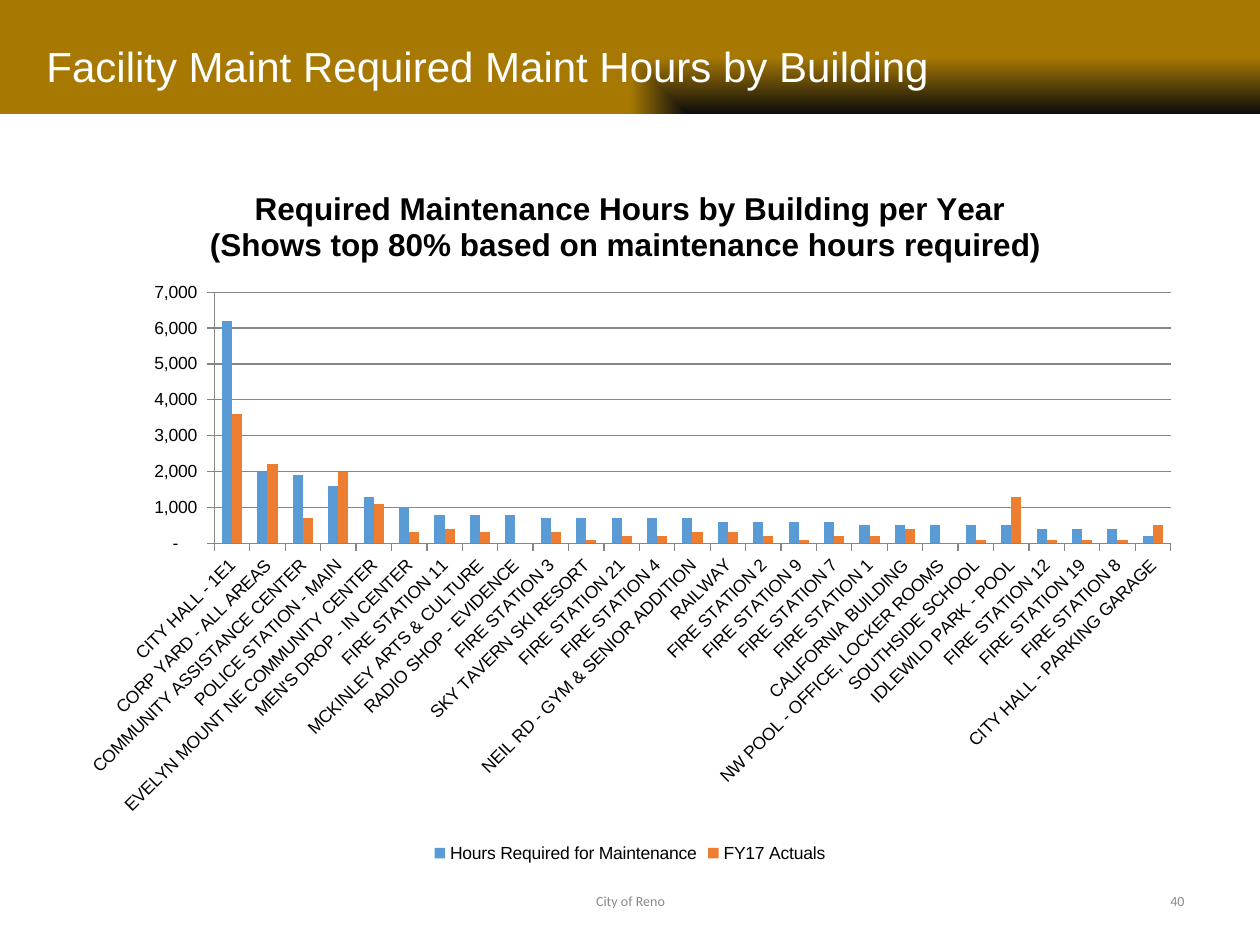
from dataclasses import dataclass
from typing import NamedTuple

from lxml import etree
from pptx import Presentation, util as u
from pptx.chart.data import CategoryChartData
from pptx.dml.color import RGBColor
from pptx.enum import chart as ch, shapes, text
from pptx.oxml import parse_xml
from pptx.oxml.ns import nsdecls, qn

WIDE, HIGH = u.Inches(10), u.Inches(7.5)


@dataclass(frozen=True)
class Theme:
    gold: str = "A77903"
    dark: str = "0C0C0C"
    white: str = "FFFFFF"
    black: str = "000000"
    gray: str = "898989"
    rule: str = "868686"
    bars: tuple = ("5B9BD5", "ED7D31")
    head: str = "Arial"
    body: str = "Calibri"
    title: int = 24
    sub: int = 18
    label: int = 10
    foot: int = 8


class Box(NamedTuple):
    """Left, top, width and height in percent of the parent's size."""
    x: float
    y: float
    w: float
    h: float

    def emu(self) -> tuple:
        sides = (WIDE, HIGH, WIDE, HIGH)
        return tuple(u.Emu(int(part * side / 100))
                     for part, side in zip(self, sides))


class Row(NamedTuple):
    name: str
    need: int
    done: int


T = Theme()
BAND = Box(0, 0, 100, 12.07)
TITLE = Box(2.7, 1.73, 78.1, 10.4)
CHART = Box(5.3, 17.47, 89.4, 74.4)
PLOT = Box(13.1, 18.1, 84.9, 35.7)  # within the chart
FOOT = Box(34.2, 92.67, 31.7, 5.33)
PAGE = Box(71.7, 92.67, 23.3, 5.33)
NUMBER = r'_(* #,##0_);_(* \(#,##0\);_(* "-"??_);_(@_)'
SERIES = ("Hours Required for Maintenance", "FY17 Actuals")
ROWS = [
    Row("CITY HALL - 1E1", 6200, 3600),
    Row("CORP YARD - ALL AREAS", 2000, 2200),
    Row("COMMUNITY ASSISTANCE CENTER", 1900, 700),
    Row("POLICE STATION - MAIN", 1600, 2000),
    Row("EVELYN MOUNT NE COMMUNITY CENTER", 1300, 1100),
    Row("MEN'S DROP - IN CENTER", 1000, 300),
    Row("FIRE STATION 11", 800, 400),
    Row("MCKINLEY ARTS & CULTURE", 800, 300),
    Row("RADIO SHOP - EVIDENCE", 800, 0),
    Row("FIRE STATION 3", 700, 300),
    Row("SKY TAVERN SKI RESORT", 700, 100),
    Row("FIRE STATION 21", 700, 200),
    Row("FIRE STATION 4", 700, 200),
    Row("NEIL RD - GYM & SENIOR ADDITION", 700, 300),
    Row("RAILWAY", 600, 300),
    Row("FIRE STATION 2", 600, 200),
    Row("FIRE STATION 9", 600, 100),
    Row("FIRE STATION 7", 600, 200),
    Row("FIRE STATION 1", 500, 200),
    Row("CALIFORNIA BUILDING", 500, 400),
    Row("NW POOL - OFFICE, LOCKER ROOMS", 500, 0),
    Row("SOUTHSIDE SCHOOL", 500, 100),
    Row("IDLEWILD PARK - POOL", 500, 1300),
    Row("FIRE STATION 12", 400, 100),
    Row("FIRE STATION 19", 400, 100),
    Row("FIRE STATION 8", 400, 100),
    Row("CITY HALL - PARKING GARAGE", 200, 500),
]


def style(font, size: int, color: str, face: str, bold: bool = False) -> None:
    font.size, font.name, font.bold = u.Pt(size), face, bold
    font.color.rgb = RGBColor.from_string(color)


def write(slide, box: Box, words: str, *, size: int, color: str, face: str,
          align=text.PP_ALIGN.LEFT) -> None:
    frame = slide.shapes.add_textbox(*box.emu()).text_frame
    frame.word_wrap = True
    frame.vertical_anchor = text.MSO_ANCHOR.MIDDLE
    para = frame.paragraphs[0]
    para.alignment = align
    run = para.add_run()
    run.text = words
    style(run.font, size, color, face)


def band(slide) -> None:
    """Header strip that darkens towards its lower right corner."""
    bar = slide.shapes.add_shape(shapes.MSO_SHAPE.RECTANGLE, *BAND.emu())
    bar.shadow.inherit = False
    bar.line.fill.background()
    bar.fill.gradient()
    grad = bar.fill._xPr.find(qn("a:gradFill"))
    grad.getparent().replace(grad, parse_xml(
        f'<a:gradFill {nsdecls("a")} rotWithShape="1"><a:gsLst>'
        f'<a:gs pos="0"><a:srgbClr val="{T.dark}"/></a:gs>'
        f'<a:gs pos="100000"><a:srgbClr val="{T.gold}"/></a:gs></a:gsLst>'
        '<a:path path="rect"><a:fillToRect l="100000" t="100000"/></a:path>'
        '<a:tileRect r="-100000" b="-100000"/></a:gradFill>'))


def place(chart, box: Box) -> None:
    """Fix the inner plot area within the chart."""
    area = chart._chartSpace.chart.plotArea
    for old in area.findall(qn("c:layout")):
        area.remove(old)
    layout = etree.Element(qn("c:layout"))
    spot = etree.SubElement(layout, qn("c:manualLayout"))
    marks = [("layoutTarget", "inner"), ("xMode", "edge"), ("yMode", "edge")]
    parts = [(tag, part / 100) for tag, part in box._asdict().items()]
    for tag, val in marks + parts:
        etree.SubElement(spot, qn(f"c:{tag}")).set("val", str(val))
    area.insert(0, layout)


def paint(line) -> None:
    line.color.rgb = RGBColor.from_string(T.rule)
    line.width = u.Pt(0.75)


def graph(slide) -> None:
    data = CategoryChartData(number_format=NUMBER)
    data.categories = [row.name for row in ROWS]
    data.add_series(SERIES[0], [row.need for row in ROWS])
    data.add_series(SERIES[1], [row.done for row in ROWS])
    chart = slide.shapes.add_chart(
        ch.XL_CHART_TYPE.COLUMN_CLUSTERED, *CHART.emu(), data).chart
    style(chart.font, T.label, T.black, T.head)

    frame = chart.chart_title.text_frame
    frame.text = ("Required Maintenance Hours by Building per Year\n"
                  "(Shows top 80% based on maintenance hours required) ")
    for para in frame.paragraphs:
        style(para.runs[0].font, T.sub, T.black, T.head, bold=True)

    chart.has_legend = True
    chart.legend.position = ch.XL_LEGEND_POSITION.BOTTOM
    chart.legend.include_in_layout = False

    plot = chart.plots[0]
    plot.gap_width, plot.overlap, plot.vary_by_categories = 150, 0, False
    for ser, color in zip(plot.series, T.bars):
        ser.format.fill.solid()
        ser.format.fill.fore_color.rgb = RGBColor.from_string(color)

    cats, vals = chart.category_axis, chart.value_axis
    for axis in (cats, vals):
        axis.major_tick_mark = ch.XL_TICK_MARK.OUTSIDE
        axis.minor_tick_mark = ch.XL_TICK_MARK.NONE
        paint(axis.format.line)
        style(axis.tick_labels.font, T.label, T.black, T.head)
    cats._element.find(qn("c:txPr")).find(qn("a:bodyPr")).set("rot", "-2700000")
    vals.minimum_scale, vals.maximum_scale, vals.major_unit = 0, 7000, 1000
    vals.tick_labels.number_format = NUMBER
    vals.tick_labels.number_format_is_linked = False
    vals.has_major_gridlines = True
    paint(vals.major_gridlines.format.line)
    place(chart, PLOT)


def main() -> None:
    deck = Presentation()
    deck.slide_width, deck.slide_height = WIDE, HIGH
    slide = deck.slides.add_slide(deck.slide_layouts[6])
    band(slide)
    write(slide, TITLE, "Facility Maint Required Maint Hours by Building",
          size=T.title, color=T.white, face=T.head)
    write(slide, FOOT, "City of Reno", size=T.foot, color=T.gray,
          face=T.body, align=text.PP_ALIGN.CENTER)
    graph(slide)
    write(slide, PAGE, "40", size=T.foot, color=T.gray,
          face=T.body, align=text.PP_ALIGN.RIGHT)
    deck.save("out.pptx")


if __name__ == "__main__":
    main()
